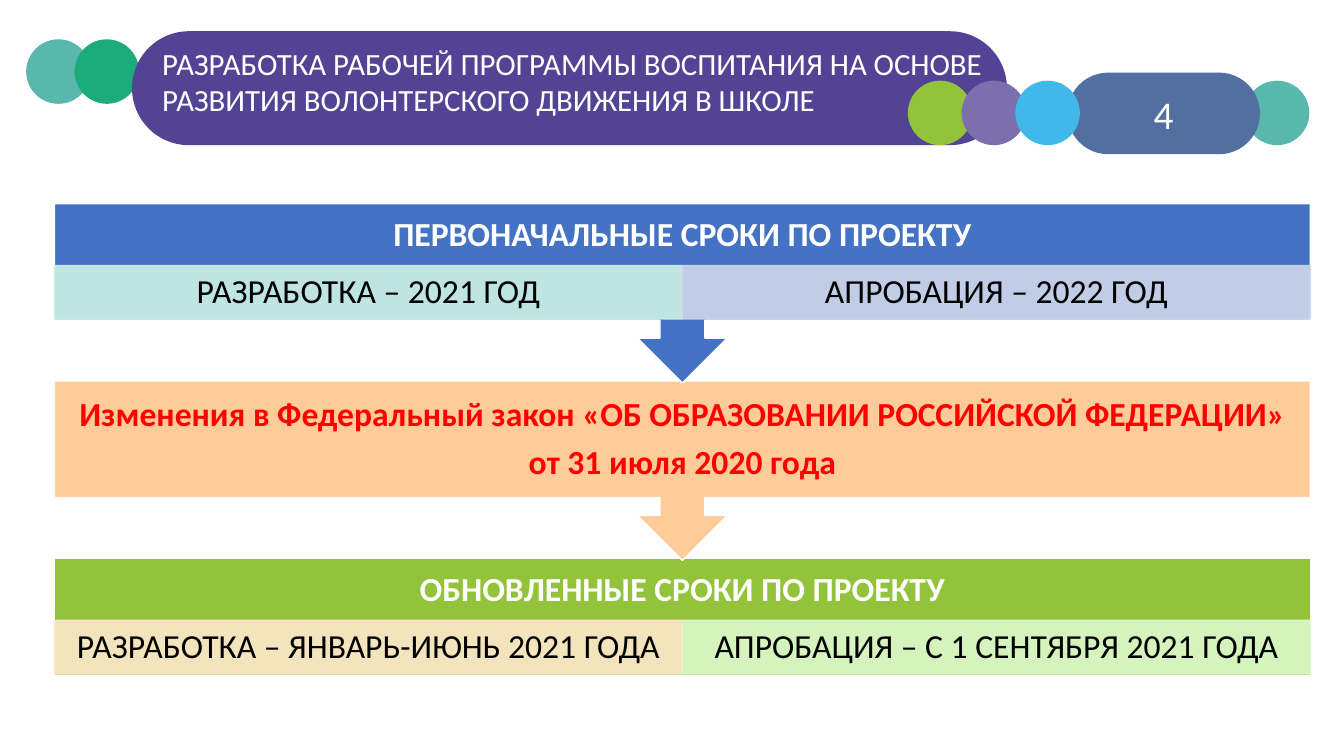
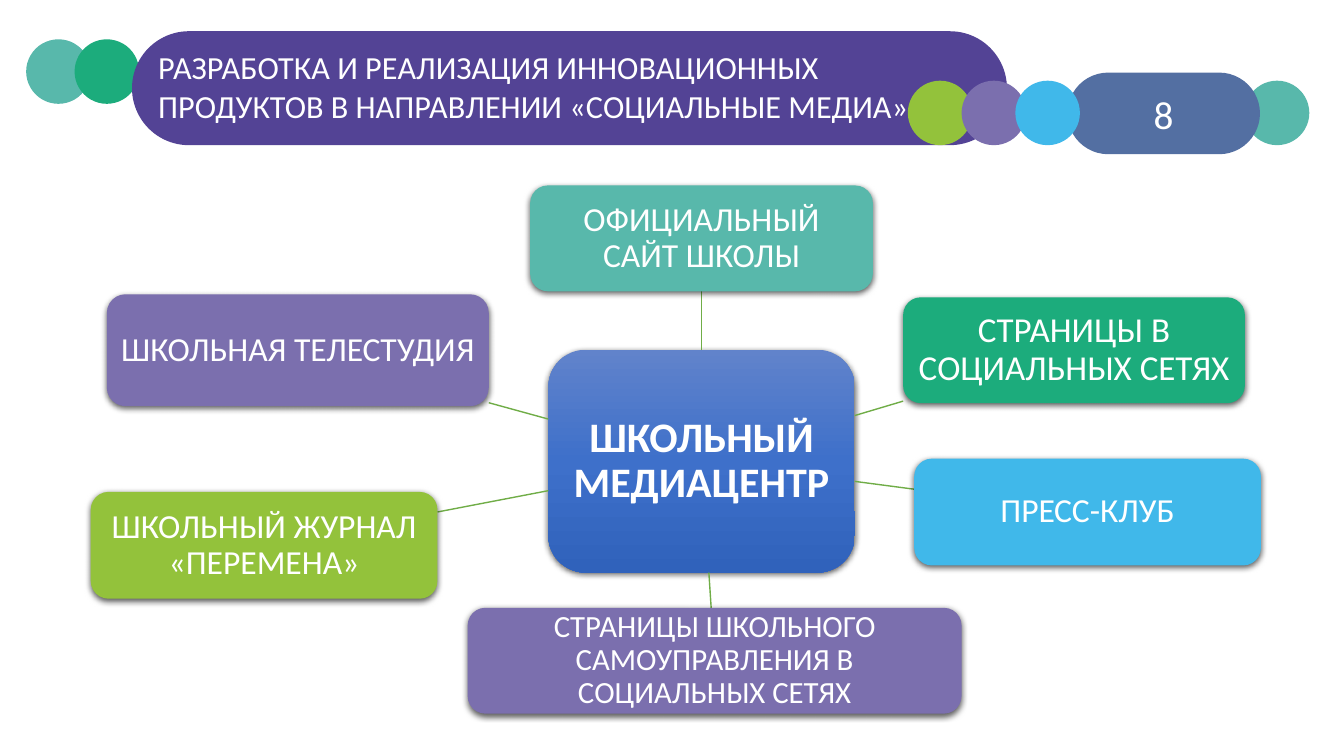
from copy import deepcopy
from dataclasses import dataclass

from lxml.etree import SubElement
from pptx import Presentation
from pptx.dml.color import RGBColor
from pptx.enum.shapes import MSO_CONNECTOR, MSO_SHAPE
from pptx.enum.text import MSO_ANCHOR, PP_ALIGN
from pptx.oxml.ns import qn
from pptx.util import Inches, Pt

SLIDE_WIDTH, SLIDE_HEIGHT = Inches(13.333), Inches(7.5)
FONT = "Calibri"
WHITE, BLACK, RED = "FFFFFF", "000000", "FF0000"
TEAL, GREEN, LIME = "58B8AB", "1CAC7C", "93C23B"
VIOLET, SKY, INDIGO, SLATE = "7B6FAE", "40B8EA", "534395", "536FA2"
BLUE, PEACH, LINK = "4472C4", "FFCC99", "70AD47"
HUB_GRADIENT = ((0, "6183CB"), (50, "3E70CA"), (100, "3062BB"))


@dataclass(frozen=True)
class Frame:
    """A rectangle in percent of the slide's width and height."""
    left: float
    top: float
    width: float
    height: float

    @property
    def center(self) -> tuple[float, float]:
        return self.left + self.width / 2, self.top + self.height / 2

    def emu(self) -> tuple[int, int, int, int]:
        return (across(self.left), down(self.top),
                across(self.width), down(self.height))


@dataclass(frozen=True)
class TextStyle:
    size: float = 24
    color: str = WHITE
    bold: bool = False
    align: PP_ALIGN = PP_ALIGN.CENTER
    anchor: MSO_ANCHOR = MSO_ANCHOR.MIDDLE
    inset_x: float = 0.1
    inset_y: float = 0.05
    spacing: float = 1
    after: float = 0


@dataclass(frozen=True)
class Header:
    lines: tuple[str, ...]
    number: str
    frame: Frame
    size: float


@dataclass(frozen=True)
class Cell:
    text: str
    fill: str


@dataclass(frozen=True)
class Panel:
    lines: tuple[str, ...]
    fill: str
    color: str = WHITE
    cells: tuple[Cell, ...] = ()


@dataclass(frozen=True)
class Card:
    text: str
    fill: str
    frame: Frame
    size: float = 24
    inset_x: float = 0.07


HEADERS = (
    Header(("РАЗРАБОТКА РАБОЧЕЙ ПРОГРАММЫ ВОСПИТАНИЯ НА ОСНОВЕ "
            "РАЗВИТИЯ ВОЛОНТЕРСКОГО ДВИЖЕНИЯ В ШКОЛЕ",),
           "4", Frame(11.33, 5.2, 62.78, 11.2), 22),
    Header(("РАЗРАБОТКА И РЕАЛИЗАЦИЯ ИННОВАЦИОННЫХ",
            "ПРОДУКТОВ В НАПРАВЛЕНИИ «СОЦИАЛЬНЫЕ МЕДИА»"),
           "8", Frame(11.03, 5.6, 62.78, 12.13), 23),
)

PANELS = (
    Panel(("ПЕРВОНАЧАЛЬНЫЕ СРОКИ ПО ПРОЕКТУ",), BLUE, cells=(
        Cell("РАЗРАБОТКА – 2021 ГОД", "CDF2E7"),
        Cell("АПРОБАЦИЯ – 2022 ГОД", "CFD6EA"))),
    Panel(("Изменения в Федеральный закон «ОБ ОБРАЗОВАНИИ РОССИЙСКОЙ ФЕДЕРАЦИИ»",
           "от 31 июля 2020 года"), PEACH, RED),
    Panel(("ОБНОВЛЕННЫЕ СРОКИ ПО ПРОЕКТУ",), LIME, cells=(
        Cell("РАЗРАБОТКА – ЯНВАРЬ-ИЮНЬ 2021 ГОДА", "FFE8CC"),
        Cell("АПРОБАЦИЯ – С 1 СЕНТЯБРЯ 2021 ГОДА", "DDF9CC"))),
)
PANEL_LEFT, PANEL_TOP, PANEL_WIDTH, PANEL_STEP = 4.05, 26.93, 93.45, 23.47
CALLOUT_HEIGHT, BODY_HEIGHT, HEADING_HEIGHT = 23.73, 15.47, 8.4
CELL_OFFSET, CELL_HEIGHT = 8.2, 7.07

HUB = Frame(40.8, 46.27, 22.8, 29.47)
CARDS = (
    Card("ОФИЦИАЛЬНЫЙ САЙТ ШКОЛЫ", TEAL, Frame(39.45, 24.53, 25.5, 14)),
    Card("СТРАНИЦЫ В СОЦИАЛЬНЫХ СЕТЯХ", GREEN, Frame(67.2, 39.33, 25.43, 14), 25),
    Card("ПРЕСС-КЛУБ", SKY, Frame(68.02, 60.67, 25.8, 14.13)),
    Card("СТРАНИЦЫ ШКОЛЬНОГО САМОУПРАВЛЕНИЯ В СОЦИАЛЬНЫХ СЕТЯХ", VIOLET,
         Frame(34.8, 80.4, 36.75, 14), 22, 0.25),
    Card("ШКОЛЬНЫЙ ЖУРНАЛ «ПЕРЕМЕНА»", LIME, Frame(6.75, 65.07, 25.8, 14.13)),
    Card("ШКОЛЬНАЯ ТЕЛЕСТУДИЯ", VIOLET, Frame(7.95, 38.93, 28.42, 14.8)),
)


def across(percent: float) -> int:
    return round(SLIDE_WIDTH * percent / 100)


def down(percent: float) -> int:
    return round(SLIDE_HEIGHT * percent / 100)


def paint(target, color: str) -> None:
    """Give a fill or a line fill one solid colour."""
    target.solid()
    target.fore_color.rgb = RGBColor.from_string(color)


def write(shape, lines: tuple[str, ...], style: TextStyle) -> None:
    frame = shape.text_frame
    frame_format = {
        "word_wrap": True, "vertical_anchor": style.anchor,
        "margin_left": Inches(style.inset_x), "margin_right": Inches(style.inset_x),
        "margin_top": Inches(style.inset_y), "margin_bottom": Inches(style.inset_y),
    }
    para_format = {"alignment": style.align, "line_spacing": style.spacing,
                   "space_after": Pt(style.size * style.after)}
    font_format = {"name": FONT, "size": Pt(style.size), "bold": style.bold}
    for name, value in frame_format.items():
        setattr(frame, name, value)
    for index, line in enumerate(lines):
        para = frame.add_paragraph() if index else frame.paragraphs[0]
        for name, value in para_format.items():
            setattr(para, name, value)
        span = para.add_run()
        span.text = line
        for name, value in font_format.items():
            setattr(span.font, name, value)
        paint(span.font.fill, style.color)


def add_box(page, kind: MSO_SHAPE, frame: Frame, fill: str, line: str = ""):
    box = page.shapes.add_shape(kind, *frame.emu())
    box.shadow.inherit = False
    paint(box.fill, fill)
    if line:
        paint(box.line.fill, line)
        box.line.width = Pt(1)
    else:
        box.line.fill.background()
    return box


def add_text(page, frame: Frame, lines: tuple[str, ...], style: TextStyle) -> None:
    write(page.shapes.add_textbox(*frame.emu()), lines, style)


def set_opacity(box, percent: int) -> None:
    for color in box.element.spPr.iter(qn("a:srgbClr")):
        SubElement(color, qn("a:alpha"), val=str(percent * 1000))


def cast_shadow(box) -> None:
    effects = box.element.spPr.find(qn("a:effectLst"))
    shadow = SubElement(effects, qn("a:outerShdw"), blurRad=str(Pt(4.5)),
                        dist=str(Pt(1.5)), dir="5400000", algn="ctr", rotWithShape="0")
    color = SubElement(shadow, qn("a:srgbClr"), val=BLACK)
    SubElement(color, qn("a:alpha"), val="63000")


def shade(box, stops: tuple[tuple[int, str], ...]) -> None:
    """Fill a box with a gradient running from top to bottom."""
    box.fill.gradient()
    box.fill.gradient_angle = 270
    stop_list = box.element.spPr.find(qn("a:gradFill")).find(qn("a:gsLst"))
    stop_list.append(deepcopy(stop_list[-1]))
    for stop, (position, color) in zip(box.fill.gradient_stops, stops):
        stop.position = position / 100
        stop.color.rgb = RGBColor.from_string(color)


def add_dot(page, left: float, top: float, color: str) -> None:
    add_box(page, MSO_SHAPE.OVAL, Frame(left, top, 4.8, 8.53), color)


def add_pill(page, frame: Frame, color: str):
    pill = add_box(page, MSO_SHAPE.ROUNDED_RECTANGLE, frame, color)
    pill.adjustments[0] = 0.5
    return pill


def add_header(page, header: Header) -> None:
    high, low = 5.2, 10.67
    add_dot(page, 92.62, low, TEAL)
    add_dot(page, 1.95, high, TEAL)
    add_dot(page, 5.55, high, GREEN)
    number = add_pill(page, Frame(79.42, 9.6, 14.33, 10.8), SLATE)
    write(number, (header.number,), TextStyle(size=28))
    add_pill(page, Frame(9.82, 4.13, 65.1, 15.07), INDIGO)
    add_text(page, header.frame, header.lines, TextStyle(
        size=header.size, align=PP_ALIGN.LEFT, anchor=MSO_ANCHOR.TOP))
    for index, color in enumerate((LIME, VIOLET, SKY)):
        add_dot(page, 67.55 + 4 * index, low, color)


def add_panel(page, row: int, panel: Panel) -> None:
    top = PANEL_TOP + row * PANEL_STEP
    last = row == len(PANELS) - 1
    kind = MSO_SHAPE.RECTANGLE if last else MSO_SHAPE.DOWN_ARROW_CALLOUT
    height = BODY_HEIGHT if last else CALLOUT_HEIGHT
    add_box(page, kind, Frame(PANEL_LEFT, top, PANEL_WIDTH, height), panel.fill, WHITE)
    heading_height = HEADING_HEIGHT if panel.cells else BODY_HEIGHT
    add_text(page, Frame(PANEL_LEFT, top, PANEL_WIDTH, heading_height), panel.lines,
             TextStyle(color=panel.color, bold=True, inset_x=0.19, inset_y=0.19,
                       spacing=0.9, after=0.35))
    for column, cell in enumerate(panel.cells):
        width = PANEL_WIDTH / len(panel.cells)
        frame = Frame(PANEL_LEFT + column * width, top + CELL_OFFSET, width, CELL_HEIGHT)
        box = add_box(page, MSO_SHAPE.RECTANGLE, frame, cell.fill, cell.fill)
        set_opacity(box, 90)
        write(box, (cell.text,), TextStyle(color=BLACK, inset_x=0.19, inset_y=0.03,
                                           spacing=0.9, after=0.35))


def edge_point(start: Frame, target: Frame) -> tuple[int, int]:
    """Where the line between two centres leaves the start frame."""
    (x, y), (target_x, target_y) = start.center, target.center
    run, rise = target_x - x, target_y - y
    share = 1 / max(abs(run) * 2 / start.width, abs(rise) * 2 / start.height)
    return across(x + run * share), down(y + rise * share)


def add_node(page, frame: Frame, text: str, fill: str, style: TextStyle):
    node = add_box(page, MSO_SHAPE.ROUNDED_RECTANGLE, frame, fill)
    cast_shadow(node)
    write(node, (text,), style)
    return node


def add_card(page, hub, card: Card) -> None:
    link = page.shapes.add_connector(MSO_CONNECTOR.STRAIGHT,
                                     *edge_point(HUB, card.frame),
                                     *edge_point(card.frame, HUB))
    paint(link.line.fill, LINK)
    link.line.width = Pt(1)
    SubElement(link.element.spPr, qn("a:effectLst"))
    node = add_node(page, card.frame, card.text, card.fill, TextStyle(
        size=card.size, inset_x=card.inset_x, inset_y=0.07, spacing=0.9, after=0.35))
    if abs(card.frame.center[0] - HUB.center[0]) < 0.01:
        link.begin_connect(hub, 0)
        link.end_connect(node, 2)


def add_page(deck, header: Header):
    page = deck.slides.add_slide(deck.slide_layouts[6])
    add_header(page, header)
    return page


def main() -> None:
    deck = Presentation()
    deck.slide_width, deck.slide_height = SLIDE_WIDTH, SLIDE_HEIGHT
    schedule, media = (add_page(deck, header) for header in HEADERS)

    for row, panel in reversed(list(enumerate(PANELS))):
        add_panel(schedule, row, panel)

    hub = add_node(media, HUB, "ШКОЛЬНЫЙ МЕДИАЦЕНТР", BLUE, TextStyle(
        size=30, bold=True, inset_x=0.08, inset_y=0.08, spacing=0.9, after=0.35))
    shade(hub, HUB_GRADIENT)
    for card in CARDS:
        add_card(media, hub, card)

    deck.save("out.pptx")


if __name__ == "__main__":
    main()
